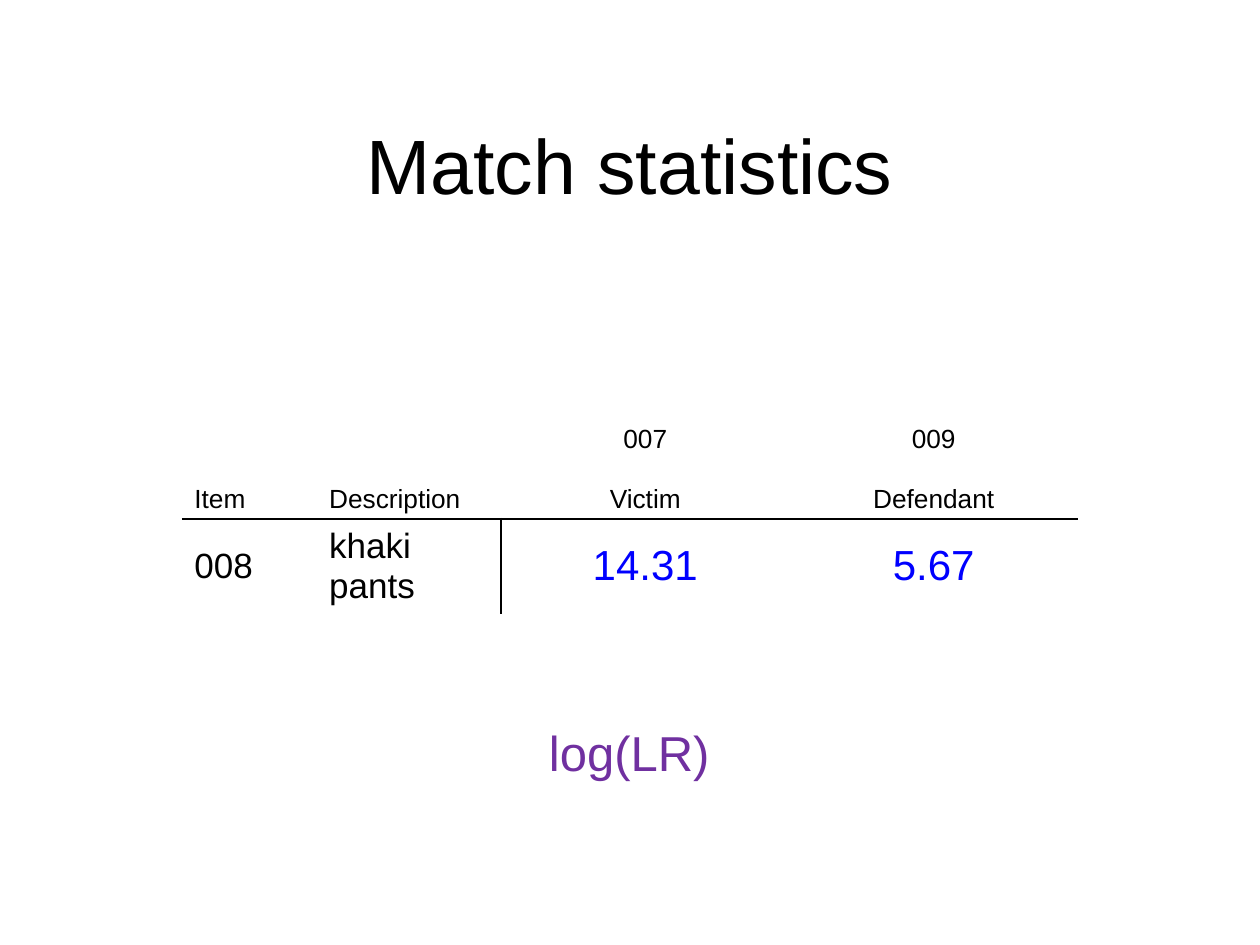
import pptx
import pptx.util
import pptx.dml.color
import pptx.enum.text
import pptx.oxml
import pptx.oxml.ns

Pt = pptx.util.Pt
RGB = pptx.dml.color.RGBColor
Align = pptx.enum.text.PP_ALIGN
Anchor = pptx.enum.text.MSO_ANCHOR

BLACK = RGB(0, 0, 0)
BLUE = RGB(0, 0, 255)
PURPLE = RGB(0x70, 0x30, 0xA0)


class Deck:
    font = "Arial"
    rule = 1.5

    def __init__(self, wide, high):
        self.prs = pptx.Presentation()
        self.prs.slide_width = Pt(wide)
        self.prs.slide_height = Pt(high)
        self.slide = self.prs.slides.add_slide(self.prs.slide_layouts[6])

    def lines(self, frame, lines, size, color, align, gap=0):
        for i, line in enumerate(lines):
            para = frame.paragraphs[0] if i == 0 else frame.add_paragraph()
            para.alignment = align
            if i:
                para.space_before = Pt(gap)
            run = para.add_run()
            run.text = line
            run.font.name = self.font
            run.font.size = Pt(size)
            run.font.color.rgb = color

    def text(self, box, line, size, color, wrap=True):
        frame = self.slide.shapes.add_textbox(*map(Pt, box)).text_frame
        frame.word_wrap = wrap
        frame.vertical_anchor = Anchor.MIDDLE
        self.lines(frame, [line], size, color, Align.CENTER)

    def table(self, left, top, cols, rows):
        shape = self.slide.shapes.add_table(
            len(rows), len(cols), Pt(left), Pt(top), Pt(sum(cols)), Pt(sum(rows)))
        grid = shape.table
        grid.first_row = grid.horz_banding = False
        for col, wide in zip(grid.columns, cols):
            col.width = Pt(wide)
        for row, high in zip(grid.rows, rows):
            row.height = Pt(high)
        return grid

    def cell(self, cell, lines, size, color, align, anchor, edges):
        cell.vertical_anchor = anchor
        cell.margin_left = cell.margin_right = Pt(7.2)
        cell.margin_top = cell.margin_bottom = Pt(3)
        self.lines(cell.text_frame, lines, size, color, align, gap=17.25)
        # Borders come before the fill in the cell properties
        props = cell._tc.get_or_add_tcPr()
        for edge in "LRTB":
            fill = (f'<a:solidFill><a:srgbClr val="{BLACK}"/></a:solidFill>'
                    if edge in edges else "<a:noFill/>")
            props.append(pptx.oxml.parse_xml(
                f'<a:ln{edge} {pptx.oxml.ns.nsdecls("a")} '
                f'w="{Pt(self.rule)}">{fill}</a:ln{edge}>'))
        cell.fill.background()

    def save(self):
        self.prs.save("out.pptx")


def main():
    deck = Deck(720, 540)

    # Title
    deck.text((3.6, 48.25, 712.8, 90), "Match statistics", 44, BLACK)

    # Table of match values
    heads = [["Item"], ["Description"], ["007", "Victim"], ["009", "Defendant"]]
    values = ["008", "khaki pants", "14.31", "5.67"]
    sides = ["T", "TR", "TL", "T"]
    grid = deck.table(103.9, 217.4, (77, 105.5, 164.8, 164.8), (79.2, 50.5))
    for i, (head, value, side) in enumerate(zip(heads, values, sides)):
        score = i > 1
        align = Align.CENTER if score else Align.LEFT
        deck.cell(grid.cell(0, i), head, 15, BLACK, align, Anchor.BOTTOM, "B")
        deck.cell(grid.cell(1, i), [value], 24 if score else 20,
                  BLUE if score else BLACK, align, Anchor.MIDDLE, side)

    # Unit of the values
    deck.text((306, 409, 107, 41), "log(LR)", 28, PURPLE, wrap=False)

    deck.save()


if __name__ == "__main__":
    main()
